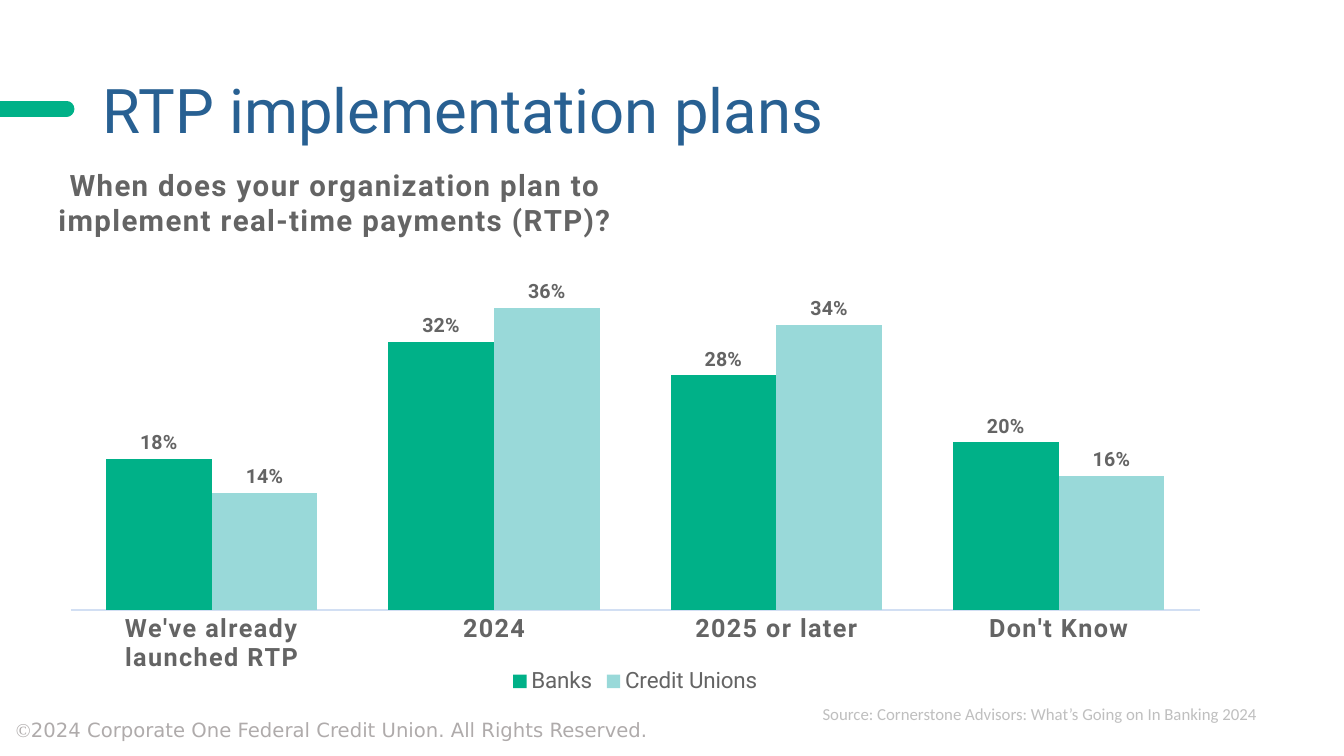
from pptx import Presentation
from pptx.chart.data import CategoryChartData
from pptx.dml.color import RGBColor
from pptx.enum.chart import XL_CHART_TYPE, XL_LABEL_POSITION, XL_LEGEND_POSITION, XL_TICK_MARK
from pptx.enum.shapes import MSO_CONNECTOR
from pptx.enum.text import MSO_ANCHOR, PP_ALIGN
from pptx.oxml import parse_xml
from pptx.oxml.ns import nsdecls
from pptx.util import Inches, Pt

COLUMNS = XL_CHART_TYPE.COLUMN_CLUSTERED
OUTSIDE_END = XL_LABEL_POSITION.OUTSIDE_END
LEGEND_BOTTOM = XL_LEGEND_POSITION.BOTTOM
NO_TICKS = XL_TICK_MARK.NONE
MIDDLE = MSO_ANCHOR.MIDDLE
GREEN, AQUA, GREY = "00B188", "99D9D9", "646464"


def set_font(font, size, color, name="Roboto", bold=False):
    font.size, font.name, font.bold = Pt(size), name, bold
    font.color.rgb = RGBColor.from_string(color)


def place_before(element, **shares):
    """Put a manual chart layout, in shares of the chart, before element."""
    target = '<c:layoutTarget val="inner"/>' if "w" in shares else ""
    modes = "".join(f'<c:{side}Mode val="edge"/>' for side in "xy")
    values = "".join(f'<c:{key} val="{share}"/>' for key, share in shares.items())
    element.addprevious(parse_xml(
        f'<c:layout {nsdecls("c")}><c:manualLayout>{target}{modes}{values}'
        '</c:manualLayout></c:layout>'))


prs = Presentation()
prs.slide_width, prs.slide_height = Inches(13.33), Inches(7.5)
slide = prs.slides.add_slide(prs.slide_layouts[5])
shapes = slide.shapes

# Heading with its accent bar
accent = shapes.add_connector(MSO_CONNECTOR.STRAIGHT, 0, Inches(1.08), Inches(0.66), Inches(1.08))
accent.line.width = Pt(11.25)
accent.line.color.rgb = RGBColor.from_string(GREEN)
accent.line._ln.set("cap", "rnd")
accent.element.spPr.append(parse_xml(f'<a:effectLst {nsdecls("a")}/>'))

heading = shapes.title
heading.left, heading.top = Inches(0.92), Inches(0.4)
heading.width, heading.height = Inches(11.5), Inches(1.45)
heading.text_frame.text = "RTP implementation plans"
heading.text_frame.vertical_anchor = MIDDLE
heading_line = heading.text_frame.paragraphs[0]
heading_line.alignment = PP_ALIGN.LEFT
heading_line.line_spacing = 0.9
set_font(heading_line.font, 44, "286092")

# Survey answers
answers = CategoryChartData(number_format="0%")
answers.categories = ["We've already launched RTP", "2024", "2025 or later", "Don't Know"]
answers.add_series("Banks", [0.18, 0.32, 0.28, 0.2])
answers.add_series("Credit Unions", [0.14, 0.36, 0.34, 0.16])
chart = shapes.add_chart(COLUMNS, Inches(0.55), Inches(1.58), Inches(11.5), Inches(5.35), answers).chart
set_font(chart.font, 10, "1B3967")

question = chart.chart_title.text_frame
question.text = "When does your organization plan to\nimplement real-time payments (RTP)?"
for question_line in question.paragraphs:
    set_font(question_line.font, 21, GREY, bold=True)

chart.has_legend = True
chart.legend.position = LEGEND_BOTTOM
chart.legend.include_in_layout = False
set_font(chart.legend.font, 16, GREY)

answer_axis = chart.category_axis
answer_axis.major_tick_mark = NO_TICKS
answer_axis.format.line.color.rgb = RGBColor.from_string("D2DFF3")
answer_axis.format.line.width = Pt(0.75)
set_font(answer_axis.tick_labels.font, 18, GREY, bold=True)

share_axis = chart.value_axis
share_axis.minimum_scale, share_axis.maximum_scale = 0, 0.4
share_axis.has_major_gridlines = False
share_axis.visible = False

plot = chart.plots[0]
plot.gap_width, plot.overlap = 67, 0
plot.vary_by_categories = False
for institution, color in zip(plot.series, (GREEN, AQUA)):
    institution.format.fill.solid()
    institution.format.fill.fore_color.rgb = RGBColor.from_string(color)
    labels = institution.data_labels
    labels.show_value = True
    labels.position = OUTSIDE_END
    labels.number_format, labels.number_format_is_linked = "0%", False
    set_font(labels.font, 14, GREY, bold=True)

chart_xml = chart.element
for automatic in chart_xml.xpath("c:chart/c:title/c:layout | c:chart/c:plotArea/c:layout"):
    automatic.getparent().remove(automatic)
place_before(chart_xml.xpath("c:chart/c:title/c:overlay")[0], x=0, y=0.01)
place_before(chart_xml.xpath("c:chart/c:plotArea/*")[0], x=0.013, y=0.214, w=0.974, h=0.622)
for spaced in chart_xml.xpath("c:chart/c:title//a:defRPr | c:chart/c:plotArea/c:catAx//a:defRPr"):
    spaced.set("spc", "100")

# Source and copyright lines
footers = [
    (8.06, 6.93, 4.57, 0.3, True, "BFBFBF", 12,
     [("Source: Cornerstone Advisors: What’s Going on In Banking 2024", "Calibri")]),
    (0.06, 7.07, 6.55, 0.34, False, "AFABAB", 14,
     [("©", "Times New Roman"),
      ("2024 Corporate One Federal Credit Union. All Rights Reserved.", "DejaVu Sans")]),
]
for left, top, width, height, wraps, color, size, pieces in footers:
    footer = shapes.add_textbox(Inches(left), Inches(top), Inches(width), Inches(height)).text_frame
    footer.word_wrap = wraps
    for wording, typeface in pieces:
        run = footer.paragraphs[0].add_run()
        run.text = wording
        set_font(run.font, size, color, typeface)

prs.save("out.pptx")
